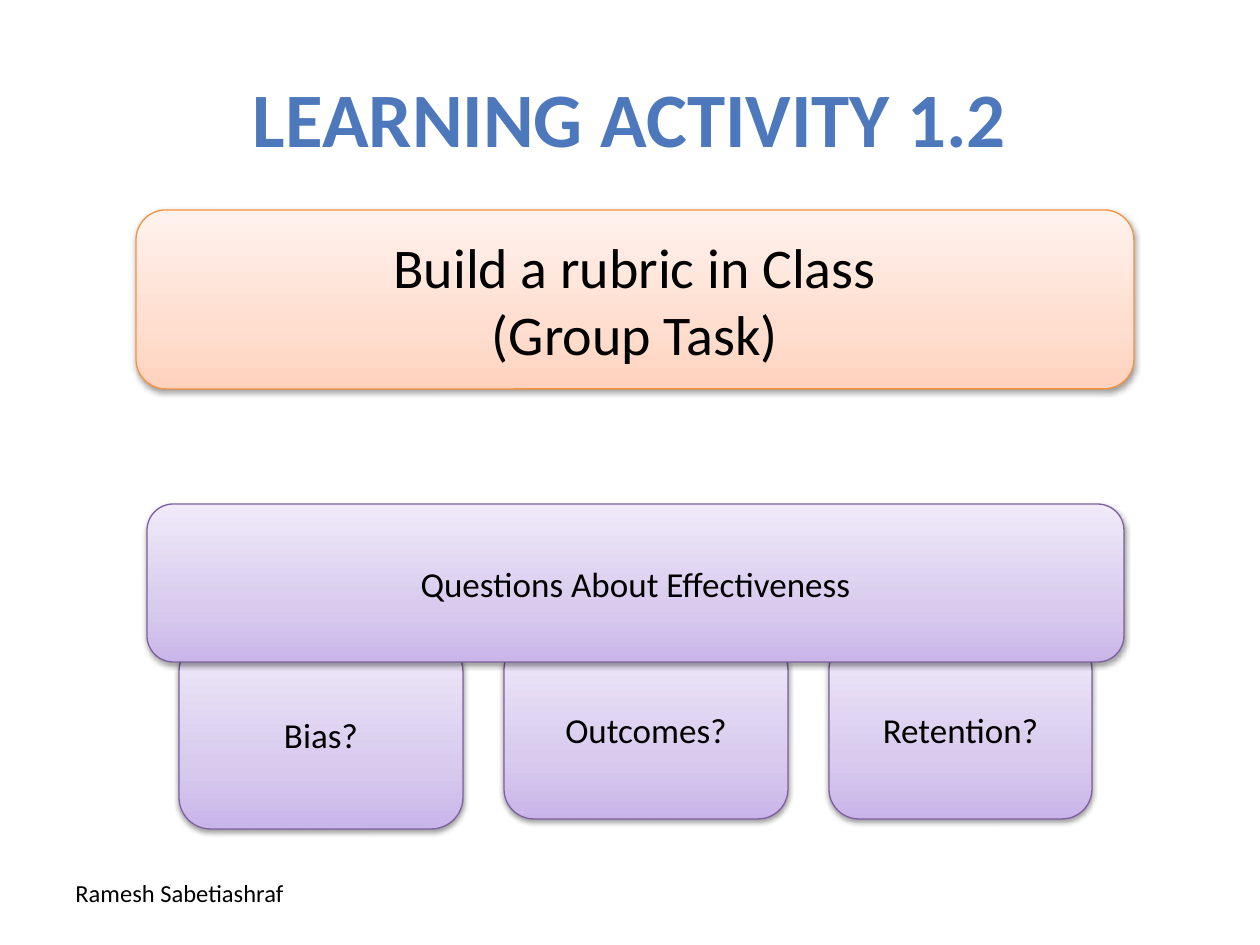
from copy import deepcopy

from lxml import etree
from pptx import Presentation
from pptx import util as u
from pptx.dml.color import RGBColor
from pptx.enum import shapes, text
from pptx.oxml.ns import qn

PX_PER_INCH = 126
FONT = "Calibri"
BLACK, WHITE, TITLE_BLUE = "000000", "FFFFFF", "4D79BC"
ORANGE = {"stops": ["FFD2BD", "FFDED0", "FFF2ED"], "line": "F69240"}
PURPLE = {"stops": ["C9B5E8", "D8CBEE", "F0EAF9"], "line": "7D60A0"}
STOP_POSITIONS = [0, 0.35, 1]

AUTHOR = ("Ramesh Sabetiashraf", (63, 872, 347, 72))
TITLE = ("LEARNING ACTIVITY 1.2", (63, 38, 1134, 157))
TASK = ("Build a rubric in Class\n(Group Task)", (136, 210, 998, 179))
EFFECTIVENESS = ("Questions About Effectiveness", (147, 504, 977, 158))
QUESTIONS = [("Bias?", 284, 189), ("Outcomes?", 284, 179), ("Retention?", 263, 179)]
QUESTIONS_LEFT, QUESTIONS_TOP, QUESTIONS_GAP = 179, 640, 41


def px(value):
    return u.Inches(value / PX_PER_INCH)


def color(value):
    return RGBColor.from_string(value)


def write(shape, words, size, ink=BLACK, bold=False, centered=True):
    frame = shape.text_frame
    frame.word_wrap = True
    frame.text = words
    if centered:
        frame.vertical_anchor = text.MSO_ANCHOR.MIDDLE
    for paragraph in frame.paragraphs:
        paragraph.alignment = text.PP_ALIGN.CENTER if centered else text.PP_ALIGN.LEFT
        for run in paragraph.runs:
            run.font.name = FONT
            run.font.size = u.Pt(size)
            run.font.bold = bold
            run.font.color.rgb = color(ink)


def add_shadow(shape):
    shape.shadow.inherit = False
    effects = shape._element.spPr.find(qn("a:effectLst"))
    shadow = etree.SubElement(effects, qn("a:outerShdw"), blurRad="40000",
                              dist="20000", dir="5400000", rotWithShape="0")
    black = etree.SubElement(shadow, qn("a:srgbClr"), val=BLACK)
    etree.SubElement(black, qn("a:alpha"), val="38000")


def add_card(slide, words, box, size, theme):
    shape = slide.shapes.add_shape(shapes.MSO_SHAPE.ROUNDED_RECTANGLE, *map(px, box))
    shape.fill.gradient()
    shape.fill.gradient_angle = 90
    stop_list = shape._element.spPr.find(".//" + qn("a:gsLst"))
    stop_list.append(deepcopy(stop_list[-1]))
    for stop, position, tint in zip(shape.fill.gradient_stops, STOP_POSITIONS, theme["stops"]):
        stop.position = position
        stop.color.rgb = color(tint)
    shape.line.color.rgb = color(theme["line"])
    shape.line.width = u.Pt(0.75)
    add_shadow(shape)
    write(shape, words, size)


def main():
    presentation = Presentation()
    presentation.slide_width, presentation.slide_height = px(1260), px(945)
    slide = presentation.slides.add_slide(presentation.slide_layouts[6])

    words, box = AUTHOR
    write(slide.shapes.add_textbox(*map(px, box)), words, 14, centered=False)

    words, box = TITLE
    title = slide.shapes.add_textbox(*map(px, box))
    title.fill.solid()
    title.fill.fore_color.rgb = color(WHITE)
    write(title, words, 44, TITLE_BLUE, bold=True)

    add_card(slide, *TASK, 32, ORANGE)
    left = QUESTIONS_LEFT
    for words, width, height in QUESTIONS:
        add_card(slide, words, (left, QUESTIONS_TOP, width, height), 20, PURPLE)
        left += width + QUESTIONS_GAP
    add_card(slide, *EFFECTIVENESS, 20, PURPLE)

    presentation.save("out.pptx")


if __name__ == "__main__":
    main()
